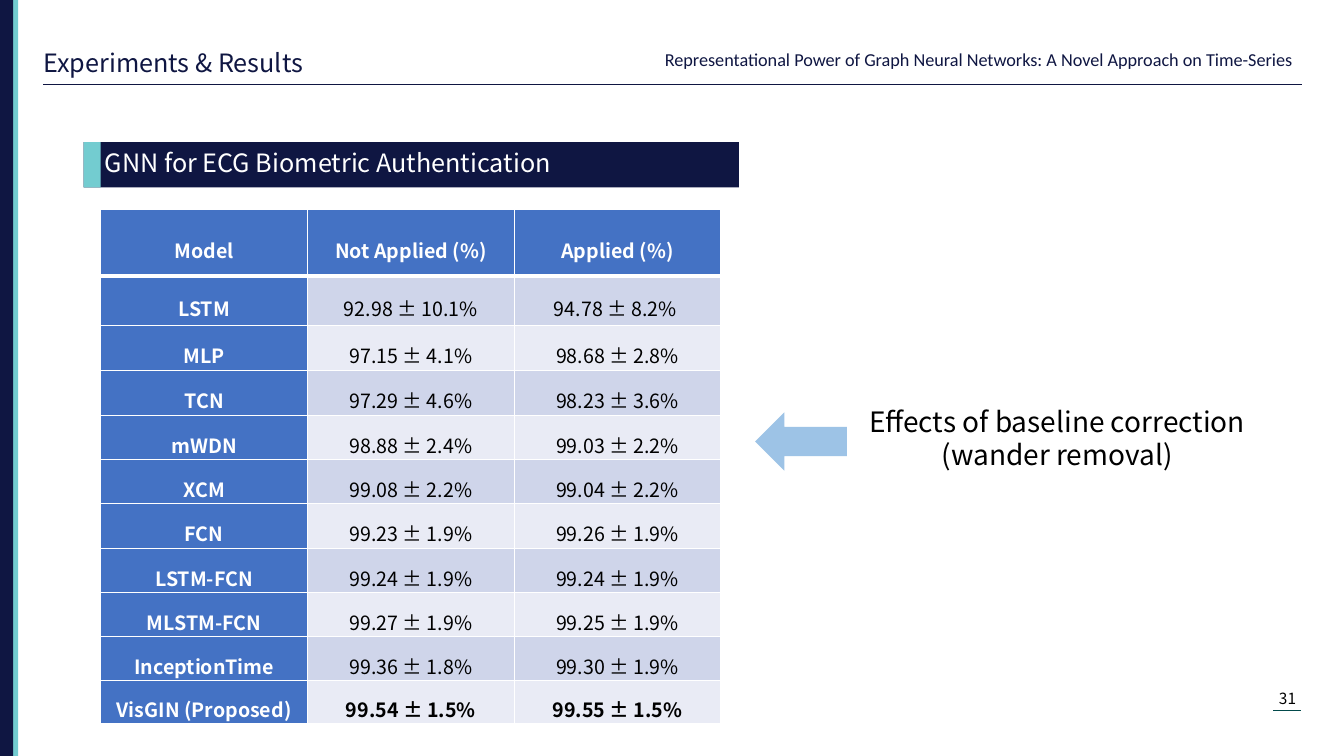
import pptx
import pptx.util
import pptx.dml.color
import pptx.enum.shapes
import pptx.enum.text
import pptx.oxml

PX = 9144  # EMU per px, 100 px to the inch
FONT = "Noto Sans CJK KR"
COLORS = {
    "navy": "0F1642", "teal": "73CCD0", "dark_teal": "024A4B",
    "head": "4472C4", "band": "CFD5EA", "light_band": "E9EBF5",
    "arrow": "9DC3E6", "white": "FFFFFF", "black": "000000",
}
SHAPE = pptx.enum.shapes.MSO_SHAPE
ALIGN = pptx.enum.text.PP_ALIGN
ANCHOR = pptx.enum.text.MSO_ANCHOR
A_NS = 'xmlns:a="http://schemas.openxmlformats.org/drawingml/2006/main"'

ROWS = [
    ("Model", "Not Applied (%)", "Applied (%)"),
    ("LSTM", "92.98 ± 10.1%", "94.78 ± 8.2% "),
    ("MLP", "97.15 ± 4.1%", "98.68 ± 2.8%"),
    ("TCN", "97.29 ± 4.6%", "98.23 ± 3.6%"),
    ("mWDN", "98.88 ± 2.4%", "99.03 ± 2.2%"),
    ("XCM", "99.08 ± 2.2%", "99.04 ± 2.2%"),
    ("FCN", "99.23 ± 1.9%", "99.26 ± 1.9%"),
    ("LSTM-FCN", "99.24 ± 1.9%", "99.24 ± 1.9%"),
    ("MLSTM-FCN", "99.27 ± 1.9%", "99.25 ± 1.9%"),
    ("InceptionTime", "99.36 ± 1.8%", "99.30 ± 1.9%"),
    ("VisGIN (Proposed)", "99.54 ± 1.5%", "99.55 ± 1.5%"),
]
ROW_HEIGHTS = [66, 49, 45] + [44] * 6 + [43, 43]
COL_WIDTH = 205


def px(*lengths):
    return [pptx.util.Emu(n * PX) for n in lengths]


def rgb(name):
    return pptx.dml.color.RGBColor.from_string(COLORS[name])


def write(tf, text, size, color, align=ALIGN.LEFT, font=FONT, bold=False,
          spacing=None):
    p = tf.paragraphs[0]
    p.text = text
    p.alignment = align
    p.line_spacing = spacing
    p.font.name = font
    p.font.size = pptx.util.Pt(size)
    p.font.bold = bold
    p.font.color.rgb = rgb(color)


def add_block(s, kind, box, color):
    sp = s.shapes.add_shape(kind, *px(*box))
    sp.shadow.inherit = False
    sp.fill.solid()
    sp.fill.fore_color.rgb = rgb(color)
    sp.line.fill.background()
    return sp


def add_rule(s, x1, x2, y, color, width):
    line = s.shapes.add_connector(
        pptx.enum.shapes.MSO_CONNECTOR.STRAIGHT, *px(x1, y, x2, y))
    line.line.color.rgb = rgb(color)
    line.line.width = pptx.util.Pt(width)
    line._element.spPr.append(pptx.oxml.parse_xml(f"<a:effectLst {A_NS}/>"))


def add_text(s, box, text, size, color, align, anchor=ANCHOR.TOP, font=FONT):
    tf = s.shapes.add_textbox(*px(*box)).text_frame
    tf.word_wrap = True
    tf.vertical_anchor = anchor
    write(tf, text, size, color, align, font)


def set_title(s, box, text):
    sp = s.shapes.title
    sp.left, sp.top, sp.width, sp.height = px(*box)
    tf = sp.text_frame
    tf.auto_size = pptx.enum.text.MSO_AUTO_SIZE.NONE
    tf.vertical_anchor = ANCHOR.MIDDLE
    write(tf, text, 18, "navy", spacing=1.3)


def add_heading(s, box, text):
    x, y, _, h = box
    sp = add_block(s, SHAPE.RECTANGLE, box, "navy")
    tf = sp.text_frame
    tf.vertical_anchor = ANCHOR.MIDDLE
    tf.margin_left, tf.margin_top, tf.margin_bottom = px(21, 0, 4)
    write(tf, text, 18, "white")
    add_block(s, SHAPE.RECTANGLE, (x, y, 17, h), "teal")


def set_borders(cell, bottom):
    tc_pr = cell._tc.get_or_add_tcPr()
    for side, width in (("L", 1), ("R", 1), ("T", 1), ("B", bottom)):
        tc_pr.append(pptx.oxml.parse_xml(
            f'<a:ln{side} {A_NS} w="{pptx.util.Pt(width)}"><a:solidFill>'
            f'<a:srgbClr val="{COLORS["white"]}"/></a:solidFill></a:ln{side}>'))


def add_results(s, x, y):
    n_cols = len(ROWS[0])
    table = s.shapes.add_table(
        len(ROWS), n_cols,
        *px(x, y, COL_WIDTH * n_cols, sum(ROW_HEIGHTS))).table
    table.first_row = table.horz_banding = False
    for col in table.columns:
        col.width, = px(COL_WIDTH)
    for i, (values, height) in enumerate(zip(ROWS, ROW_HEIGHTS)):
        table.rows[i].height, = px(height)
        for j, value in enumerate(values):
            cell = table.cell(i, j)
            is_head = i == 0 or j == 0
            band = "band" if i % 2 else "light_band"
            set_borders(cell, 3 if i == 0 else 1)
            cell.fill.solid()
            cell.fill.fore_color.rgb = rgb("head" if is_head else band)
            cell.vertical_anchor = ANCHOR.MIDDLE
            cell.margin_left, cell.margin_right = px(7, 7)
            cell.margin_top = cell.margin_bottom = 0
            write(cell.text_frame, value, 14, "white" if is_head else "black",
                  ALIGN.CENTER, bold=is_head or i == len(ROWS) - 1,
                  spacing=1.5)


def main():
    prs = pptx.Presentation()
    prs.slide_width, prs.slide_height = px(1333, 750)
    s = prs.slides.add_slide(prs.slide_layouts[5])

    # Page frame
    add_block(s, SHAPE.RECTANGLE, (5, 0, 13, 750), "teal")
    add_block(s, SHAPE.RECTANGLE, (0, 0, 13, 750), "navy")
    set_title(s, (33, 27, 447, 60), "Experiments & Results")
    add_text(s, (642, 43, 649, 32),
             "Representational Power of Graph Neural Networks: "
             "A Novel Approach on Time-Series",
             13, "navy", ALIGN.RIGHT, ANCHOR.BOTTOM, "Calibri")
    add_rule(s, 43, 1291, 84, "navy", 1)
    add_text(s, (1243, 679, 68, 29), "31", 11, "black", ALIGN.CENTER)
    add_rule(s, 1263, 1290, 705, "dark_teal", 0.5)

    # Results table
    add_heading(s, (83, 141, 650, 45), "GNN for ECG Biometric Authentication")
    add_results(s, 100, 208)

    # Remark beside the table
    add_block(s, SHAPE.LEFT_ARROW, (749, 409, 91, 58), "arrow")
    add_text(s, (851, 396, 395, 77),
             "Effects of baseline correction (wander removal)",
             20, "black", ALIGN.CENTER)

    prs.save("out.pptx")


if __name__ == "__main__":
    main()
